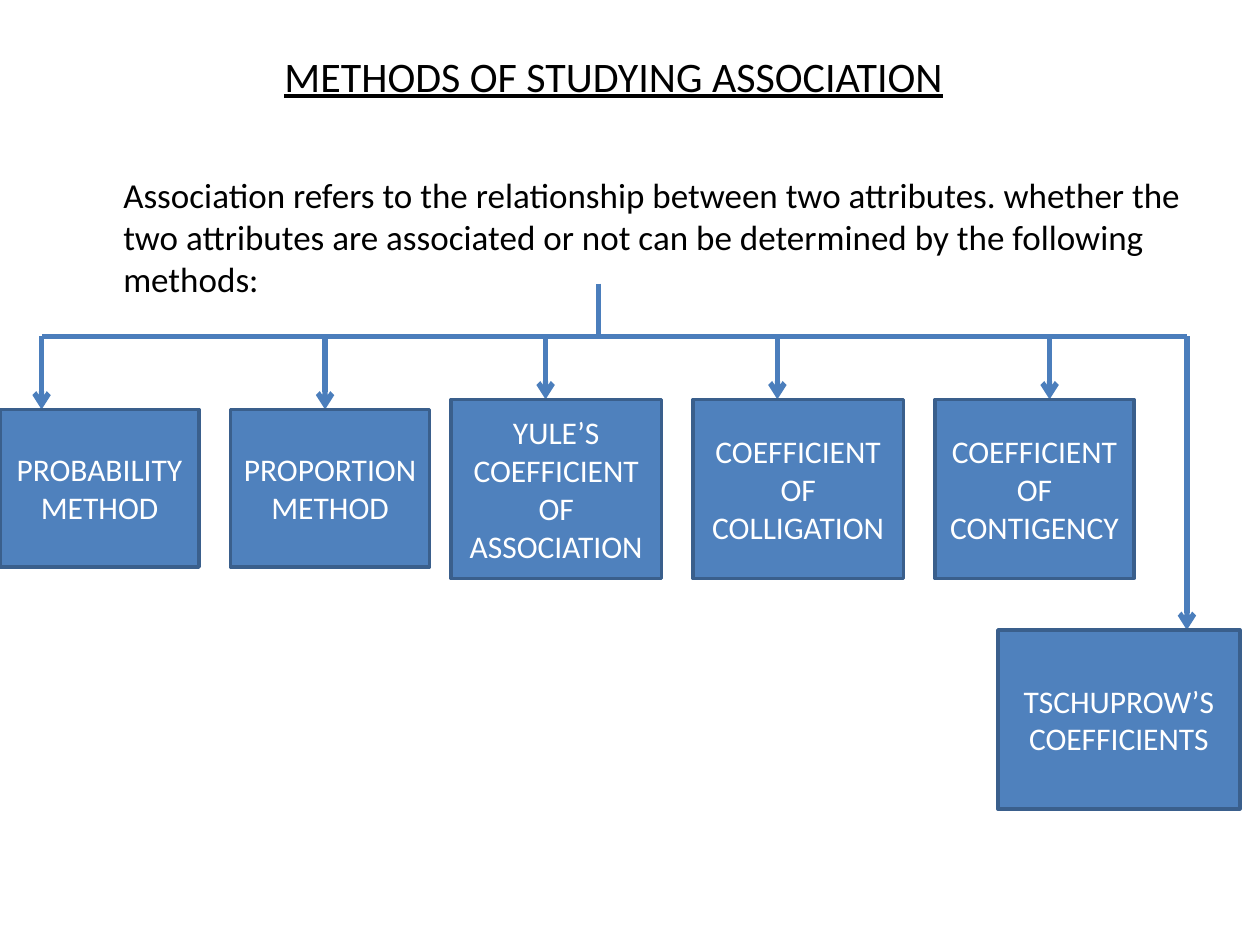
from dataclasses import dataclass

from lxml.etree import SubElement
from pptx import Presentation
from pptx.dml.color import RGBColor
from pptx.enum.shapes import MSO_CONNECTOR, MSO_SHAPE
from pptx.enum.text import MSO_ANCHOR, PP_ALIGN
from pptx.oxml.ns import qn
from pptx.slide import Slide
from pptx.text.text import TextFrame
from pptx.util import Inches, Pt

BLACK = RGBColor(0x00, 0x00, 0x00)
WHITE = RGBColor(0xFF, 0xFF, 0xFF)
BOX_FILL = RGBColor(0x4F, 0x81, 0xBD)
BOX_EDGE = RGBColor(0x3A, 0x5F, 0x8C)
BRANCH = RGBColor(0x4B, 0x7E, 0xBC)

TITLE_FONT = {"name": "Calibri", "size": Pt(24), "underline": True}
INTRO_FONT = {"name": "Calibri", "size": Pt(20)}
METHOD_FONT = {"name": "Calibri", "size": Pt(18)}

STEM_X, STEM_TOP = 4.75, 2.25
BAR_Y = 2.67


@dataclass(frozen=True)
class Method:
    lines: tuple[str, ...]
    arrow_x: float
    left: float
    top: float
    width: float
    height: float


METHODS = (
    Method(("PROBABILITY", "METHOD"), 0.33, 0, 3.25, 1.58, 1.25),
    Method(("PROPORTION", "METHOD"), 2.58, 1.83, 3.25, 1.58, 1.25),
    Method(("YULE’S COEFFICIENT", "OF ASSOCIATION"), 4.33, 3.58, 3.17, 1.67, 1.42),
    Method(("COEFFICIENT OF", "COLLIGATION"), 6.17, 5.5, 3.17, 1.67, 1.42),
    Method(("COEFFICIENT OF", "CONTIGENCY"), 8.33, 7.42, 3.17, 1.58, 1.42),
    Method(("TSCHUPROW’S", "COEFFICIENTS"), 9.42, 7.92, 5, 1.92, 1.42),
)


def write_lines(frame: TextFrame, lines: tuple[str, ...], font_format: dict,
                color: RGBColor, align: PP_ALIGN) -> None:
    frame.word_wrap = True
    for index, line in enumerate(lines):
        paragraph = frame.add_paragraph() if index else frame.paragraphs[0]
        paragraph.alignment = align
        run = paragraph.add_run()
        run.text = line
        run.font.color.rgb = color
        for name, value in font_format.items():
            setattr(run.font, name, value)


def add_text(slide: Slide, text: str, left: float, top: float, width: float,
             height: float, font_format: dict) -> None:
    box = slide.shapes.add_textbox(Inches(left), Inches(top), Inches(width), Inches(height))
    write_lines(box.text_frame, (text,), font_format, BLACK, PP_ALIGN.LEFT)


def add_branch(slide: Slide, x1: float, y1: float, x2: float, y2: float,
               arrow: bool = False) -> None:
    branch = slide.shapes.add_connector(
        MSO_CONNECTOR.STRAIGHT, Inches(x1), Inches(y1), Inches(x2), Inches(y2))
    branch.line.color.rgb = BRANCH
    branch.line.width = Pt(3)
    if arrow:
        SubElement(branch.line._get_or_add_ln(), qn("a:tailEnd"), type="arrow")
    SubElement(branch._element.spPr, qn("a:effectLst"))


def add_method(slide: Slide, method: Method) -> None:
    add_branch(slide, method.arrow_x, BAR_Y, method.arrow_x, method.top, arrow=True)
    box = slide.shapes.add_shape(
        MSO_SHAPE.FLOWCHART_PROCESS, Inches(method.left), Inches(method.top),
        Inches(method.width), Inches(method.height))
    box.shadow.inherit = False
    box.fill.solid()
    box.fill.fore_color.rgb = BOX_FILL
    box.line.color.rgb = BOX_EDGE
    box.line.width = Pt(2)
    box.text_frame.vertical_anchor = MSO_ANCHOR.MIDDLE
    write_lines(box.text_frame, method.lines, METHOD_FONT, WHITE, PP_ALIGN.CENTER)


def main() -> None:
    deck = Presentation()
    deck.slide_width, deck.slide_height = Inches(10), Inches(7.5)
    slide = deck.slides.add_slide(deck.slide_layouts[6])

    # Title and introduction
    add_text(slide, "METHODS OF STUDYING ASSOCIATION", 2.16, 0.35, 5.6, 0.5, TITLE_FONT)
    add_text(slide, "Association refers to the relationship between two attributes. "
             "whether the two attributes are associated or not can be determined by "
             "the following methods:", 0.88, 1.33, 8.62, 1.12, INTRO_FONT)

    # Stem and crossbar, which spans the outer arrows
    add_branch(slide, STEM_X, STEM_TOP, STEM_X, BAR_Y)
    add_branch(slide, METHODS[-1].arrow_x, BAR_Y, METHODS[0].arrow_x, BAR_Y)

    # Methods
    for method in METHODS:
        add_method(slide, method)

    deck.save("out.pptx")


if __name__ == "__main__":
    main()
